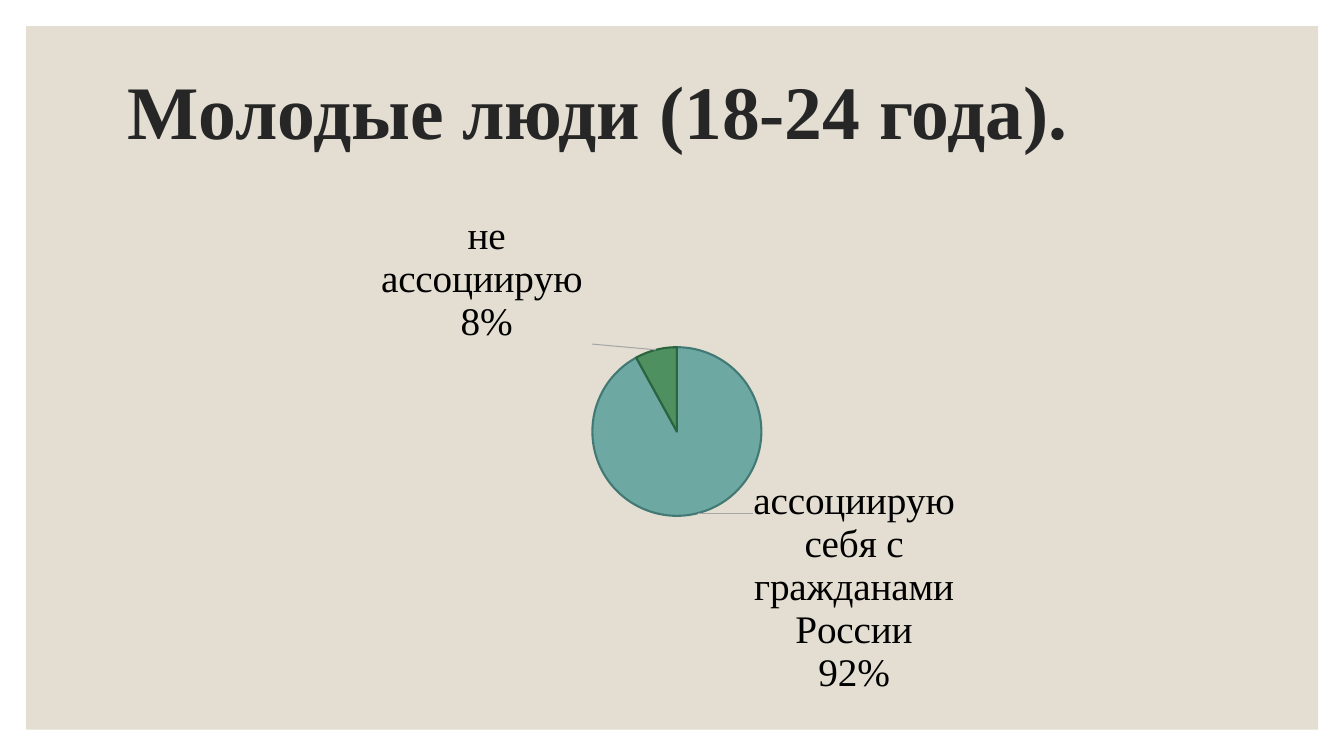
import dataclasses

import lxml.etree
import pptx
import pptx.chart.data
import pptx.dml.color
import pptx.enum.chart
import pptx.enum.shapes
import pptx.enum.text
import pptx.oxml
import pptx.util
from pptx.util import Cm


@dataclasses.dataclass(frozen=True)
class Theme:
    panel: str = "E3DED1"
    title: str = "262626"
    label: str = "000000"
    label_fill: str = "FFFFFF"
    leader: str = "A6A6A6"
    title_size: int = 54
    label_size: int = 28
    chart_size: int = 10
    serif: str = "Times New Roman"
    sans: str = "TeX Gyre Adventor"


@dataclasses.dataclass(frozen=True)
class Answer:
    """One slice of the pie; the shift moves its label away from the rim."""
    name: str
    percent: int
    fill: str
    outline: str
    shift_x: int
    shift_y: int
    label_height: int


NAMESPACES = {
    "c": "http://schemas.openxmlformats.org/drawingml/2006/chart",
    "a": "http://schemas.openxmlformats.org/drawingml/2006/main",
    "c15": "http://schemas.microsoft.com/office/drawing/2012/chart",
}
LABEL_SIZE_EXTENSION = "{CE6537A1-D6FC-4f65-9D91-7224C49458BB}"

theme = Theme()
rgb = pptx.dml.color.RGBColor.from_string
chart_width, chart_height = Cm(29.21), Cm(13.41)
pie_left, pie_top, pie_size = Cm(12.59), Cm(3.68), Cm(4.26)
label_width = Cm(5.26)
answers = [
    Answer("ассоциирую себя с гражданами России", 92, "62A39F", "427975", Cm(1.36), Cm(-0.98), Cm(5.5)),
    Answer("не ассоциирую ", 8, "3E8853", "2B6540", Cm(-1.57), Cm(0), Cm(3.35)),
]


def node(tag, *children, **attributes):
    """Build an XML element such as c:layout around its children."""
    prefix, name = tag.split(":")
    element = pptx.oxml.parse_xml(
        lxml.etree.tostring(lxml.etree.Element(f"{{{NAMESPACES[prefix]}}}{name}", nsmap=NAMESPACES)))
    for key, value in attributes.items():
        element.set(key, str(value))
    element.extend(children)
    return element


def manual_layout(*modes, **lengths):
    """Turn lengths x, y, w, h into shares of the chart area."""
    whole = {"x": chart_width, "w": chart_width, "y": chart_height, "h": chart_height}
    shares = [node(f"c:{key}", val=round(length / whole[key], 4)) for key, length in lengths.items()]
    return node("c:manualLayout", *modes, *shares)


deck = pptx.Presentation()
deck.slide_width, deck.slide_height = Cm(33.87), Cm(19.05)
page = deck.slides.add_slide(deck.slide_layouts[5])

# Background panel, behind the title
panel = page.shapes.add_shape(
    pptx.enum.shapes.MSO_SHAPE.RECTANGLE, Cm(0.66), Cm(0.66), Cm(32.56), Cm(17.73))
panel.shadow.inherit = False
panel.fill.solid()
panel.fill.fore_color.rgb = rgb(theme.panel)
panel.line.fill.background()

# Title
title = page.shapes.title
panel.element.addnext(title.element)
title.left, title.top, title.width, title.height = Cm(2.97), Cm(0.74), Cm(27.94), Cm(4.34)
frame = title.text_frame
frame.text = "Молодые люди (18-24 года)."
frame.word_wrap = True
frame.auto_size = pptx.enum.text.MSO_AUTO_SIZE.NONE
frame.vertical_anchor = pptx.enum.text.MSO_ANCHOR.MIDDLE
para = frame.paragraphs[0]
para.alignment = pptx.enum.text.PP_ALIGN.LEFT
para.line_spacing = 0.9
para.font.name = theme.serif
para.font.size = pptx.util.Pt(theme.title_size)
para.font.bold = True
para.font.color.rgb = rgb(theme.title)

# Pie chart
data = pptx.chart.data.CategoryChartData()
data.categories = [answer.name for answer in answers]
data.add_series("Series 1", [answer.percent for answer in answers])
chart = page.shapes.add_chart(
    pptx.enum.chart.XL_CHART_TYPE.PIE, Cm(2.34), Cm(5.08), chart_width, chart_height, data).chart
chart.has_legend = False
chart.has_title = False
chart.font.name = theme.sans
chart.font.size = pptx.util.Pt(theme.chart_size)
chart.font.color.rgb = rgb(theme.label)
pie = chart.plots[0]
pie.vary_by_categories = True
series = pie.series[0]

# Fixed place of the pie inside the chart area
plot_area = chart.element.find(".//{*}plotArea")
for layout in plot_area.findall("{*}layout"):
    plot_area.remove(layout)
plot_area.insert(0, node("c:layout", manual_layout(
    node("c:layoutTarget", val="inner"), node("c:xMode", val="edge"), node("c:yMode", val="edge"),
    x=pie_left, y=pie_top, w=pie_size, h=pie_size)))

# Labels of the whole series, with leader lines
labels = series.data_labels
labels.show_value = False
labels.show_category_name = True
labels.show_percentage = True
labels.number_format = "0%"
labels.number_format_is_linked = False
leader_color = node("a:solidFill", node("a:srgbClr", val=theme.leader))
chart.element.find(".//{*}ser/{*}dLbls").append(
    node("c:leaderLines", node("c:spPr", node("a:ln", leader_color, w=pptx.util.Pt(0.75)))))

# Slices and their boxed labels
for index, answer in enumerate(answers):
    point = series.points[index]
    point.format.fill.solid()
    point.format.fill.fore_color.rgb = rgb(answer.fill)
    point.format.line.color.rgb = rgb(answer.outline)
    point.format.line.width = pptx.util.Pt(1.5)
    slice_color = chart.element.findall(".//{*}dPt")[index].find("{*}spPr/{*}solidFill/{*}srgbClr")
    slice_color.append(node("a:alpha", val=90000))

    label = point.data_label
    label.position = pptx.enum.chart.XL_LABEL_POSITION.OUTSIDE_END
    label.font.name = theme.serif
    label.font.size = pptx.util.Pt(theme.label_size)
    label.font.color.rgb = rgb(theme.label)

    box = chart.element.findall(".//{*}dLbl")[index]
    for flag, shown in {"showVal": 0, "showCatName": 1, "showPercent": 1}.items():
        box.find("{*}" + flag).set("val", str(shown))
    box_fill = node("a:solidFill", node("a:srgbClr", val=theme.label_fill))
    box_line = node("a:ln", node("a:solidFill", node("a:srgbClr", val=answer.fill)), w=pptx.util.Pt(0.75))
    box_parts = [
        node("c:layout", manual_layout(x=answer.shift_x, y=answer.shift_y)),
        node("c:numFmt", formatCode="0%", sourceLinked=0),
        node("c:spPr", box_fill, box_line),
    ]
    for part in reversed(box_parts):
        box.find("{*}idx").addnext(part)
    separator = node("c:separator")
    separator.text = "\n"
    box_size = node("c15:layout", manual_layout(w=label_width, h=answer.label_height))
    box.extend([separator, node("c:extLst", node("c:ext", box_size, uri=LABEL_SIZE_EXTENSION))])

deck.save("out.pptx")
